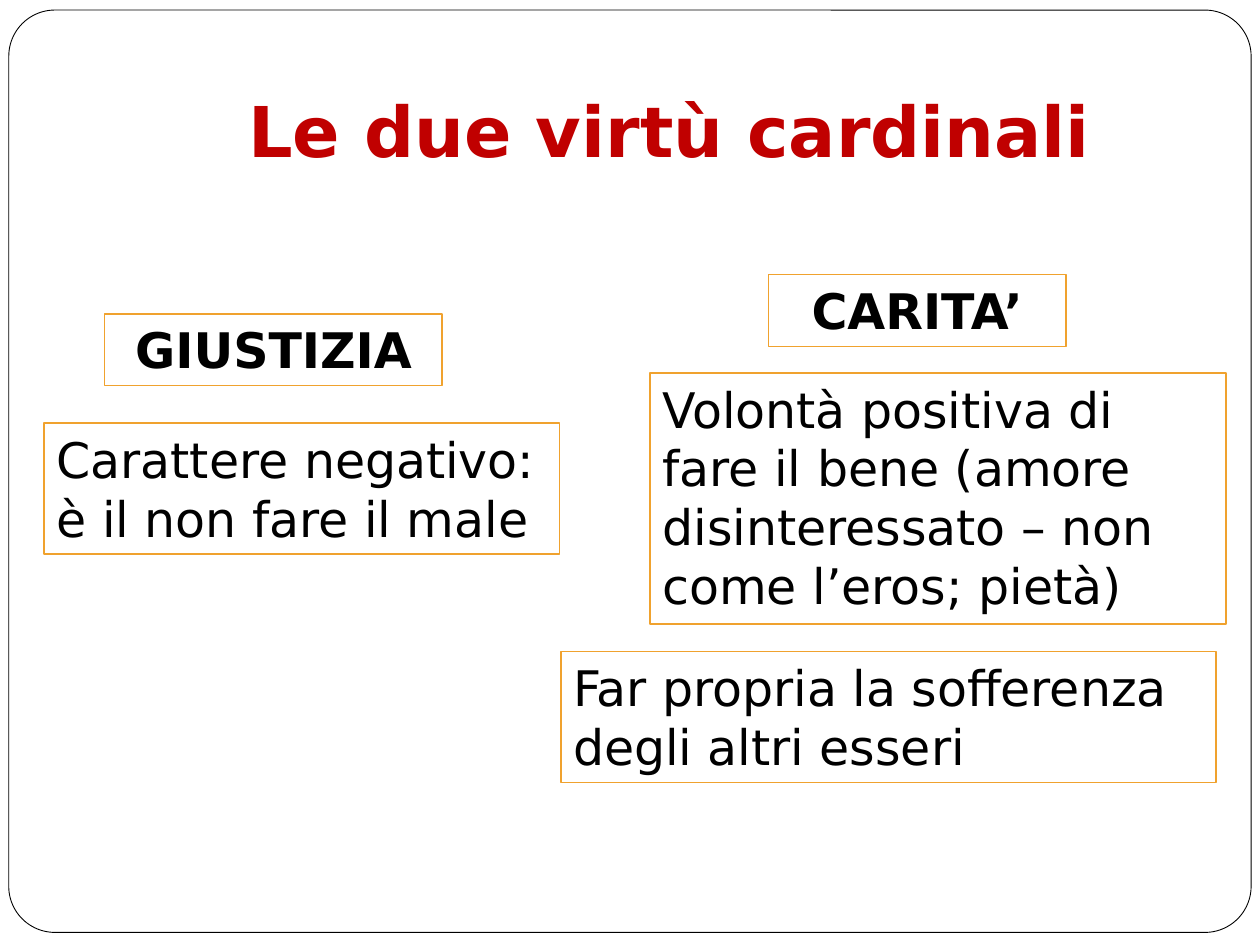
import pptx
import pptx.dml.color
import pptx.enum.shapes
import pptx.enum.text
import pptx.util

Inches = pptx.util.Inches
ALIGN = pptx.enum.text.PP_ALIGN
ANCHOR = pptx.enum.text.MSO_ANCHOR
SHAPE = pptx.enum.shapes.MSO_SHAPE

FONT = "DejaVu Sans"
BLACK, WHITE, RED, ORANGE = "000000", "FFFFFF", "C00000", "F0A22E"


def color(hex_code):
    return pptx.dml.color.RGBColor.from_string(hex_code)


def add_outlined_shape(slide, kind, box, line_color, line_width):
    shape = slide.shapes.add_shape(kind, *map(Inches, box))
    shape.shadow.inherit = False
    shape.fill.solid()
    shape.fill.fore_color.rgb = color(WHITE)
    shape.line.color.rgb = color(line_color)
    shape.line.width = pptx.util.Pt(line_width)
    return shape


def set_text(shape, text, size, text_color, bold, alignment, anchor):
    frame = shape.text_frame
    frame.word_wrap = True
    frame.vertical_anchor = anchor
    paragraph = frame.paragraphs[0]
    paragraph.text = text
    paragraph.alignment = alignment
    paragraph.font.name = FONT
    paragraph.font.size = pptx.util.Pt(size)
    paragraph.font.bold = bold
    paragraph.font.color.rgb = color(text_color)


def add_frame(slide):
    frame = add_outlined_shape(slide, SHAPE.ROUNDED_RECTANGLE,
                               (0.07, 0.08, 9.86, 7.32), BLACK, 0.5)
    frame.adjustments[0] = 0.05


def add_title(slide, text):
    title = slide.shapes.add_textbox(*map(Inches, (1.06, 0.21, 8.5, 1.25)))
    set_text(title, text, 40, RED, True, ALIGN.CENTER, ANCHOR.BOTTOM)
    title.text_frame.margin_bottom = Inches(0.1)


def add_box(slide, text, box, heading=False):
    shape = add_outlined_shape(slide, SHAPE.RECTANGLE, box, ORANGE, 1)
    alignment = ALIGN.CENTER if heading else ALIGN.LEFT
    set_text(shape, text, 28, BLACK, heading, alignment, ANCHOR.TOP)
    shape.text_frame.auto_size = pptx.enum.text.MSO_AUTO_SIZE.SHAPE_TO_FIT_TEXT


def main():
    presentation = pptx.Presentation()
    presentation.slide_width = Inches(10)
    presentation.slide_height = Inches(7.5)
    slide = presentation.slides.add_slide(presentation.slide_layouts[6])

    add_frame(slide)
    add_title(slide, "Le due virtù cardinali")

    # Justice
    add_box(slide, "GIUSTIZIA", (0.83, 2.49, 2.68, 0.57), heading=True)
    add_box(slide, "Carattere negativo: è il non fare il male",
            (0.35, 3.36, 4.09, 1.04))

    # Charity
    add_box(slide, "CARITA’", (6.1, 2.18, 2.36, 0.57), heading=True)
    add_box(slide, "Volontà positiva di fare il bene (amore disinteressato "
            "– non come l’eros; pietà)", (5.16, 2.96, 4.57, 1.99))
    add_box(slide, "Far propria la sofferenza degli altri esseri",
            (4.45, 5.17, 5.2, 1.04))

    presentation.save("out.pptx")


if __name__ == "__main__":
    main()
